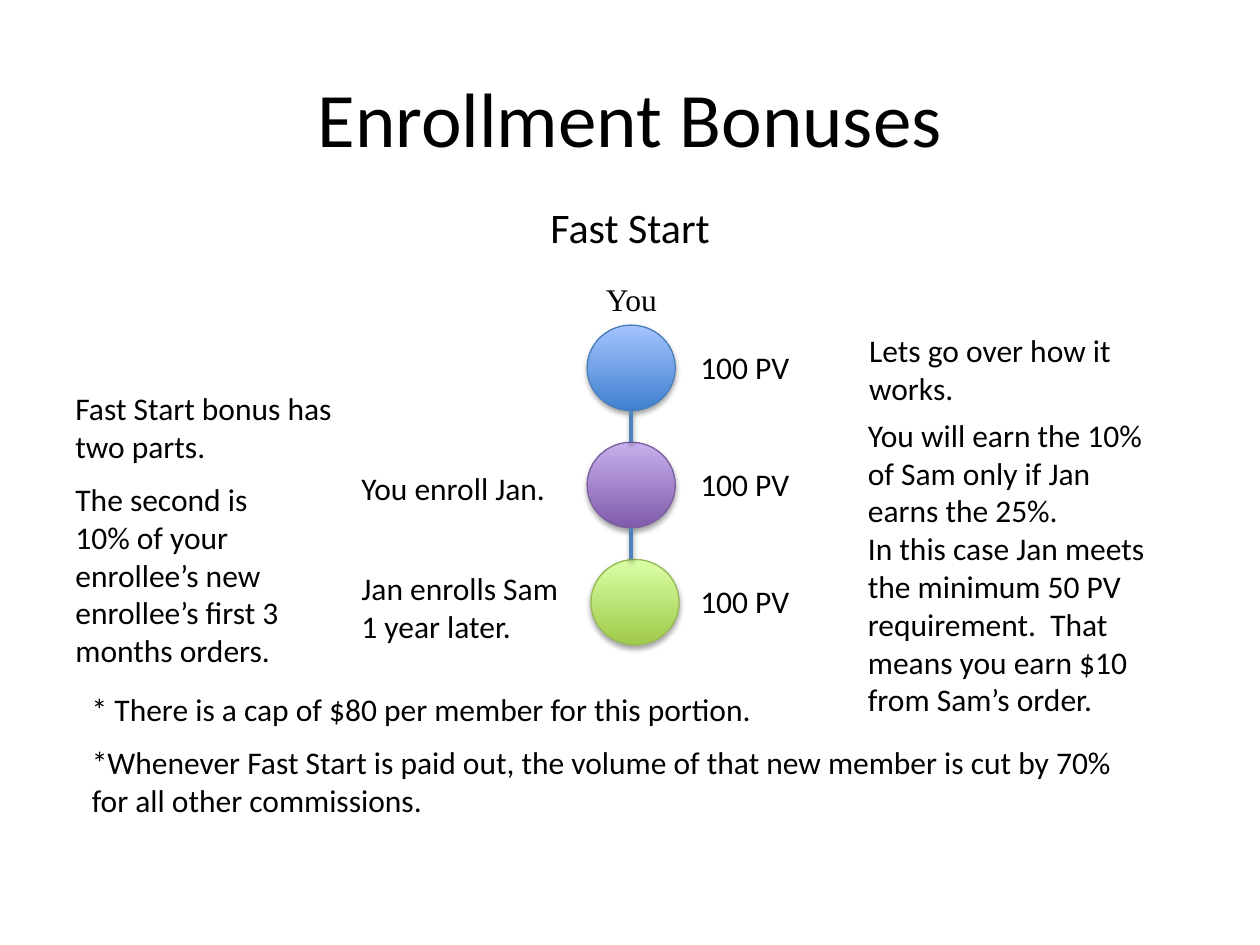
"""Build the Enrollment Bonuses slide on a grid of 100 columns and 75 rows."""
from lxml import etree
from pptx import Presentation
from pptx.dml.color import RGBColor
from pptx.enum.shapes import MSO_CONNECTOR, MSO_SHAPE
from pptx.enum.text import MSO_ANCHOR, PP_ALIGN
from pptx.oxml import parse_xml
from pptx.util import Inches, Pt

CIRCLE = MSO_SHAPE.FLOWCHART_CONNECTOR
STRAIGHT = MSO_CONNECTOR.STRAIGHT
MIDDLE, TOP = MSO_ANCHOR.MIDDLE, MSO_ANCHOR.TOP
CENTER, LEFT = PP_ALIGN.CENTER, PP_ALIGN.LEFT
DRAWING = "http://schemas.openxmlformats.org/drawingml/2006/main"

deck = Presentation()
deck.slide_width, deck.slide_height = Inches(10), Inches(7.5)
COL, ROW = deck.slide_width / 100, deck.slide_height / 75
page = deck.slides.add_slide(deck.slide_layouts[6])


def paint(color_format, value):
    """Set a colour from a hex string."""
    color_format.rgb = RGBColor.from_string(value)


def cast_shadow(shape, distance, opacity):
    """Give a shape a soft black shadow straight below it."""
    properties = shape._element.spPr
    for effects in properties.findall(etree.QName(DRAWING, "effectLst")):
        properties.remove(effects)
    properties.append(parse_xml(
        f'<a:effectLst xmlns:a="{DRAWING}"><a:outerShdw blurRad="{Pt(3.1)}" '
        f'dist="{Pt(distance)}" dir="5400000" rotWithShape="0"><a:srgbClr val="000000">'
        f'<a:alpha val="{opacity * 1000}"/></a:srgbClr></a:outerShdw></a:effectLst>'))


FIRST, STEP, WIDE, HIGH, AXIS = 25.8, 9.3, 7, 6.8, 50.1
members = [
    (46.6, "3F80CE", "A4C4FF", "4B7EBC"),
    (46.6, "7F5BAB", "C8B0ED", "7D60A0"),
    (46.9, "A0CA4A", "DAFFA5", "98B955"),
]
for level, (left, dark, light, edge) in enumerate(members):
    top = FIRST + level * STEP
    circle = page.shapes.add_shape(
        CIRCLE, int(left * COL), int(top * ROW), int(WIDE * COL), int(HIGH * ROW))
    circle.fill.gradient()
    circle.fill.gradient_angle = 90
    for stop, shade in zip(circle.fill.gradient_stops, (dark, light)):
        paint(stop.color, shade)
    paint(circle.line.color, edge)
    circle.line.width = Pt(0.75)
    circle.shadow.inherit = False
    cast_shadow(circle, 1.8, 35)

for level in range(1, len(members)):
    bottom = FIRST + level * STEP
    link = page.shapes.add_connector(
        STRAIGHT, int(AXIS * COL), int((bottom - STEP + HIGH) * ROW),
        int(AXIS * COL), int(bottom * ROW))
    paint(link.line.color, "4F81BD")
    link.line.width = Pt(2)
    cast_shadow(link, 1.6, 38)

texts = [
    (5, 3, 90, 12.5, 44, "Calibri", ["Enrollment Bonuses"]),
    (42.7, 15.5, 14.7, 5, 24, "Calibri", ["Fast Start"]),
    (47.1, 21.7, 7.5, 4, 18, "Times New Roman", ["You"]),
    (27.7, 36.7, 17, 4, 18, "Calibri", ["You enroll Jan."]),
    (27.7, 44.7, 19.2, 7.1, 18, "Calibri", ["Jan enrolls Sam 1 year later."]),
    (5, 30.4, 24.4, 7.1, 18, "Calibri", ["Fast Start bonus has two parts."]),
    (5, 37.6, 20.5, 16.2, 18, "Calibri",
     ["The second is 10% of your enrollee’s new enrollee’s first 3 months orders."]),
    (68, 25.8, 23.4, 7.1, 18, "Calibri", ["Lets go over how it works."]),
    (67.9, 32.5, 24.3, 25.2, 18, "Calibri",
     ["You will earn the 10% of Sam only if Jan earns the 25%.",
      "In this case Jan meets the minimum 50 PV requirement.  "
      "That means you earn $10 from Sam’s order."]),
    (6.3, 54.3, 57, 4, 18, "Calibri",
     ["* There is a cap of $80 per member for this portion."]),
    (6.3, 58.5, 85.1, 7.1, 18, "Calibri",
     ["*Whenever Fast Start is paid out, the volume of that new member "
      "is cut by 70% for all other commissions."]),
]
for level in range(len(members)):
    texts.append((54.6, FIRST + 1.3 + level * STEP, 9.6, 4, 18, "Calibri", ["100 PV"]))

for left, top, width, height, size, font, lines in texts:
    box = page.shapes.add_textbox(
        int(left * COL), int(top * ROW), int(width * COL), int(height * ROW))
    frame = box.text_frame
    frame.word_wrap = True
    frame.vertical_anchor = MIDDLE if size == 44 else TOP
    frame.text = "\n".join(lines)
    for para in frame.paragraphs:
        para.alignment = CENTER if size == 44 else LEFT
        para.font.name, para.font.size = font, Pt(size)
        paint(para.font.color, "000000")

deck.save("out.pptx")
